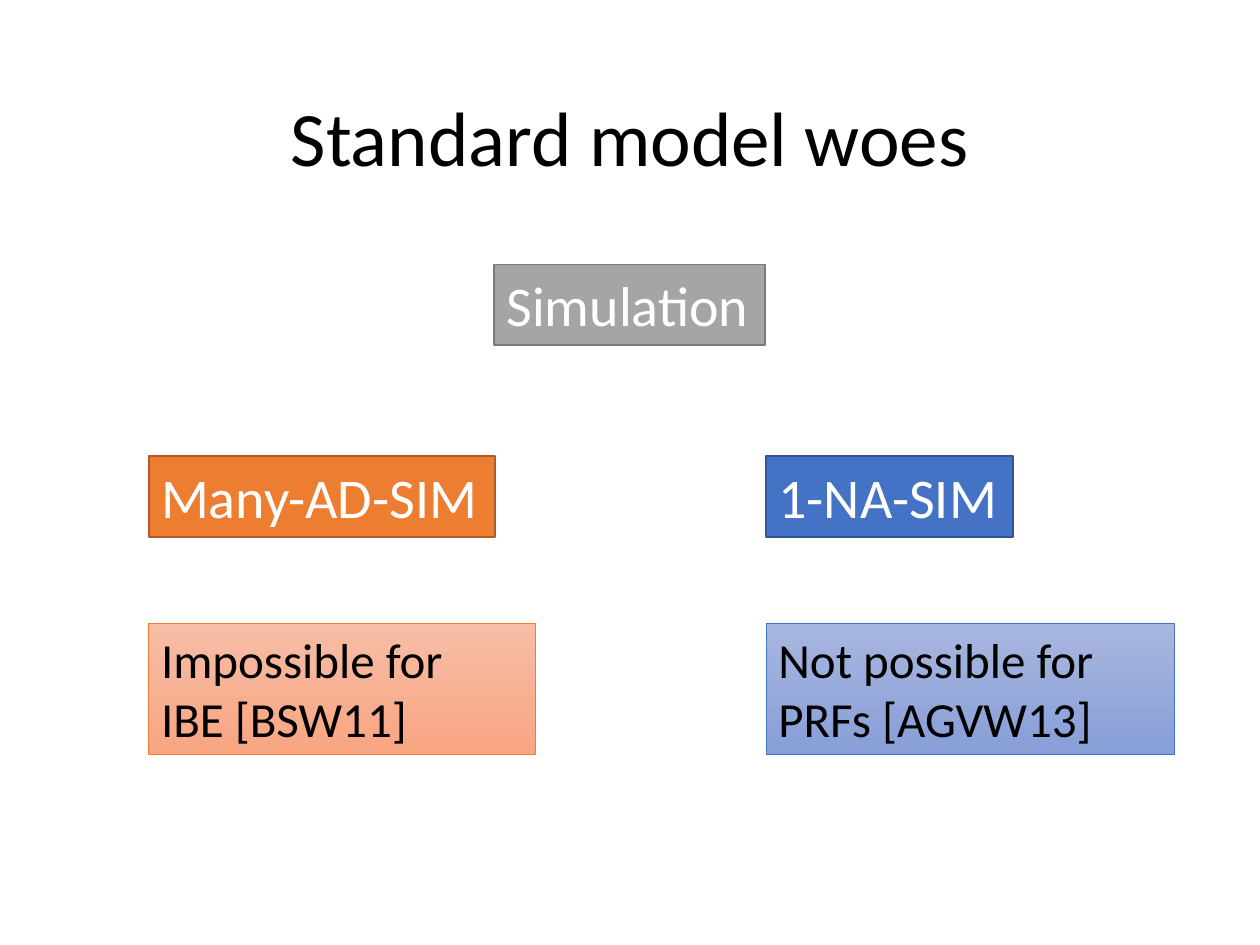
from pptx import Presentation
from pptx.dml.color import RGBColor
from pptx.enum.shapes import MSO_SHAPE
from pptx.enum.text import MSO_ANCHOR, MSO_AUTO_SIZE, PP_ALIGN
from pptx.util import Inches, Pt

FONT = "Calibri"
BLACK = RGBColor(0x00, 0x00, 0x00)
WHITE = RGBColor(0xFF, 0xFF, 0xFF)
GRAY, GRAY_EDGE = RGBColor(0xA5, 0xA5, 0xA5), RGBColor(0x7A, 0x7A, 0x7A)
ORANGE, ORANGE_EDGE = RGBColor(0xED, 0x7D, 0x31), RGBColor(0xAF, 0x5C, 0x24)
BLUE, BLUE_EDGE = RGBColor(0x44, 0x72, 0xC4), RGBColor(0x32, 0x54, 0x91)
ORANGE_TINTS = RGBColor(0xF7, 0xBD, 0xA5), RGBColor(0xF8, 0xA5, 0x82)
BLUE_TINTS = RGBColor(0xA8, 0xB7, 0xDF), RGBColor(0x88, 0x9E, 0xD7)

LEFT_COL, RIGHT_COL = 1.18, 6.08
MODEL_TOP, RESULT_TOP = 3.62, 4.95


def add_box(text, left, top, width, height, edge, edge_pt, size, color):
    s = slide.shapes.add_shape(MSO_SHAPE.RECTANGLE, Inches(left), Inches(top),
                               Inches(width), Inches(height))
    s.shadow.inherit = False
    s.line.color.rgb = edge
    s.line.width = Pt(edge_pt)
    tf = s.text_frame
    tf.text = text
    tf.auto_size = MSO_AUTO_SIZE.SHAPE_TO_FIT_TEXT
    tf.vertical_anchor = MSO_ANCHOR.TOP
    p = tf.paragraphs[0]
    p.alignment = PP_ALIGN.LEFT
    set_font(p, size, color)
    return s


def set_font(p, size, color):
    for r in p.runs:
        r.font.name = FONT
        r.font.size = Pt(size)
        r.font.color.rgb = color


prs = Presentation()
prs.slide_width, prs.slide_height = Inches(10), Inches(7.5)
slide = prs.slides.add_slide(prs.slide_layouts[5])

title = slide.shapes.title
title.left, title.top = Inches(0.69), Inches(0.4)
title.width, title.height = Inches(8.62), Inches(1.45)
title.text_frame.text = "Standard model woes"
title.text_frame.vertical_anchor = MSO_ANCHOR.MIDDLE
p = title.text_frame.paragraphs[0]
p.alignment = PP_ALIGN.CENTER
p.line_spacing = 0.9
set_font(p, 44, BLACK)

models = [
    ("Simulation", 3.92, 2.1, 2.15, GRAY, GRAY_EDGE),
    ("Many-AD-SIM", LEFT_COL, MODEL_TOP, 2.75, ORANGE, ORANGE_EDGE),
    ("1-NA-SIM", RIGHT_COL, MODEL_TOP, 1.96, BLUE, BLUE_EDGE),
]
for text, left, top, width, fill, edge in models:
    s = add_box(text, left, top, width, 0.64, edge, 1, 32, WHITE)
    s.text_frame.word_wrap = False
    s.fill.solid()
    s.fill.fore_color.rgb = fill

results = [
    ("Impossible for\vIBE [BSW11]", LEFT_COL, 3.07, ORANGE, ORANGE_TINTS),
    ("Not possible for PRFs [AGVW13]", RIGHT_COL, 3.24, BLUE, BLUE_TINTS),
]
for text, left, width, edge, tints in results:
    s = add_box(text, left, RESULT_TOP, width, 1.04, edge, 0.5, 28, BLACK)
    s.text_frame.word_wrap = True
    s.fill.gradient()
    s.fill.gradient_angle = 270
    for stop, tint in zip(s.fill.gradient_stops, tints):
        stop.color.rgb = tint

prs.save("out.pptx")
